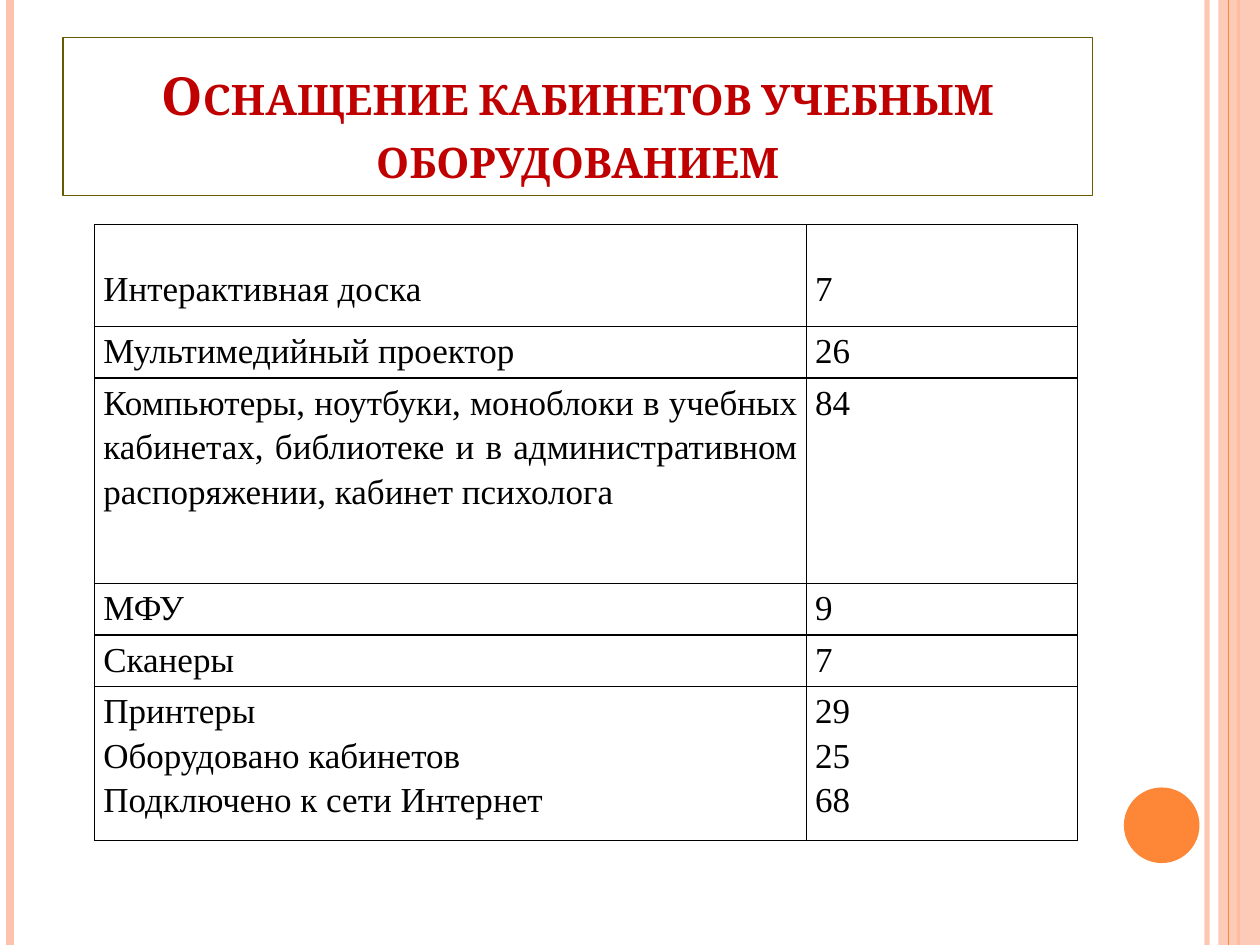
from pptx import Presentation
from pptx.dml.color import RGBColor
from pptx.enum.shapes import MSO_CONNECTOR, MSO_SHAPE
from pptx.enum.text import MSO_ANCHOR, PP_ALIGN
from pptx.oxml import parse_xml
from pptx.oxml.ns import nsdecls, qn
from pptx.oxml.xmlchemy import OxmlElement
from pptx.util import Inches, Pt

COLORS = {
    "peach": "FEC3AE",
    "orange": "FE8637",
    "title": "C00000",
    "frame": "675A00",
    "text": "000000",
}

# Left edge, width in points, colour, opacity in percent
STRIPES = [
    (9.58, 3, "peach", 93),
    (0.08, 4.5, "peach", 100),
    (9.83, 1.5, "orange", 100),
]

COLUMN_WIDTHS = [5.65, 2.15]
# Row height, label lines, value lines
EQUIPMENT = [
    (0.81, ["Интерактивная доска"], ["7"]),
    (0.41, ["Мультимедийный проектор"], ["26"]),
    (1.63, ["Компьютеры, ноутбуки, моноблоки в учебных кабинетах, библиотеке "
            "и в административном распоряжении, кабинет психолога"], ["84"]),
    (0.41, ["МФУ"], ["9"]),
    (0.41, ["Сканеры"], ["7"]),
    (1.22, ["Принтеры", "Оборудовано кабинетов", "Подключено к сети Интернет"],
     ["29", "25", "68"]),
]


def color(name):
    return RGBColor.from_string(COLORS[name])


def set_opacity(fill_parent, percent):
    """Add an alpha value to the solid colour inside an XML element."""
    alpha = OxmlElement("a:alpha")
    alpha.set("val", str(percent * 1000))
    fill_parent.find(".//" + qn("a:srgbClr")).append(alpha)


def add_stripe(slide, x, width, color_name, opacity=100):
    stripe = slide.shapes.add_connector(
        MSO_CONNECTOR.STRAIGHT, Inches(x), 0, Inches(x), Inches(7.5))
    stripe.line.color.rgb = color(color_name)
    stripe.line.width = Pt(width)
    properties = stripe._element.spPr
    if opacity < 100:
        set_opacity(properties, opacity)
    properties.append(OxmlElement("a:effectLst"))


def add_filled_shape(slide, kind, left, top, width, height, color_name):
    shape = slide.shapes.add_shape(
        kind, Inches(left), Inches(top), Inches(width), Inches(height))
    shape.shadow.inherit = False
    shape.fill.solid()
    shape.fill.fore_color.rgb = color(color_name)
    shape.line.fill.background()
    return shape


def add_run(paragraph, text, font_name, size, color_name, bold=False):
    run = paragraph.add_run()
    run.text = text
    run.font.name = font_name
    run.font.size = Pt(size)
    run.font.bold = bold
    run.font.color.rgb = color(color_name)
    return run


def add_title(slide, text):
    title = slide.shapes.add_textbox(
        Inches(0.5), Inches(0.3), Inches(8.17), Inches(1.25))
    title.line.color.rgb = color("frame")
    title.line.width = Pt(0.75)
    frame = title.text_frame
    frame.word_wrap = True
    frame.vertical_anchor = MSO_ANCHOR.BOTTOM
    paragraph = frame.paragraphs[0]
    paragraph.alignment = PP_ALIGN.CENTER
    run = add_run(paragraph, text, "Cambria", 30, "title", bold=True)
    run.font._element.set("cap", "small")


def add_borders(cell):
    properties = cell._tc.get_or_add_tcPr()
    for index, side in enumerate(("lnL", "lnR", "lnT", "lnB")):
        properties.insert(index, parse_xml(
            f'<a:{side} {nsdecls("a")} w="{Pt(1)}"><a:solidFill>'
            f'<a:srgbClr val="{COLORS["text"]}"/></a:solidFill></a:{side}>'))


def fill_cell(cell, lines, top_margin):
    cell.fill.background()
    add_borders(cell)
    cell.margin_left = cell.margin_right = Inches(0.07)
    cell.margin_top = Inches(top_margin)
    cell.margin_bottom = 0
    frame = cell.text_frame
    for index, line in enumerate(lines):
        paragraph = frame.add_paragraph() if index else frame.paragraphs[0]
        paragraph.alignment = PP_ALIGN.JUSTIFY
        paragraph.line_spacing = 1.15
        add_run(paragraph, line, "Times New Roman", 20, "text")


def add_equipment_table(slide):
    table = slide.shapes.add_table(
        len(EQUIPMENT), len(COLUMN_WIDTHS), Inches(0.75), Inches(1.78),
        Inches(sum(COLUMN_WIDTHS)), Inches(4.89)).table
    table.first_row = table.horz_banding = False
    for column, width in zip(table.columns, COLUMN_WIDTHS):
        column.width = Inches(width)
    for row_index, (height, *contents) in enumerate(EQUIPMENT):
        table.rows[row_index].height = Inches(height)
        top_margin = 0 if row_index else 0.32
        for cell, lines in zip(table.rows[row_index].cells, contents):
            fill_cell(cell, lines, top_margin)


def main():
    presentation = Presentation()
    presentation.slide_width = Inches(10)
    presentation.slide_height = Inches(7.5)
    slide = presentation.slides.add_slide(presentation.slide_layouts[6])

    for stripe in STRIPES:
        add_stripe(slide, *stripe)
    band = add_filled_shape(
        slide, MSO_SHAPE.RECTANGLE, 9.67, 0, 0.33, 7.5, "peach")
    set_opacity(band._element.spPr, 87)
    add_stripe(slide, 9.75, 0.75, "orange")
    add_filled_shape(slide, MSO_SHAPE.OVAL, 8.92, 6.25, 0.6, 0.6, "orange")

    add_title(slide, "Оснащение кабинетов учебным оборудованием")
    add_equipment_table(slide)
    presentation.save("out.pptx")


if __name__ == "__main__":
    main()
